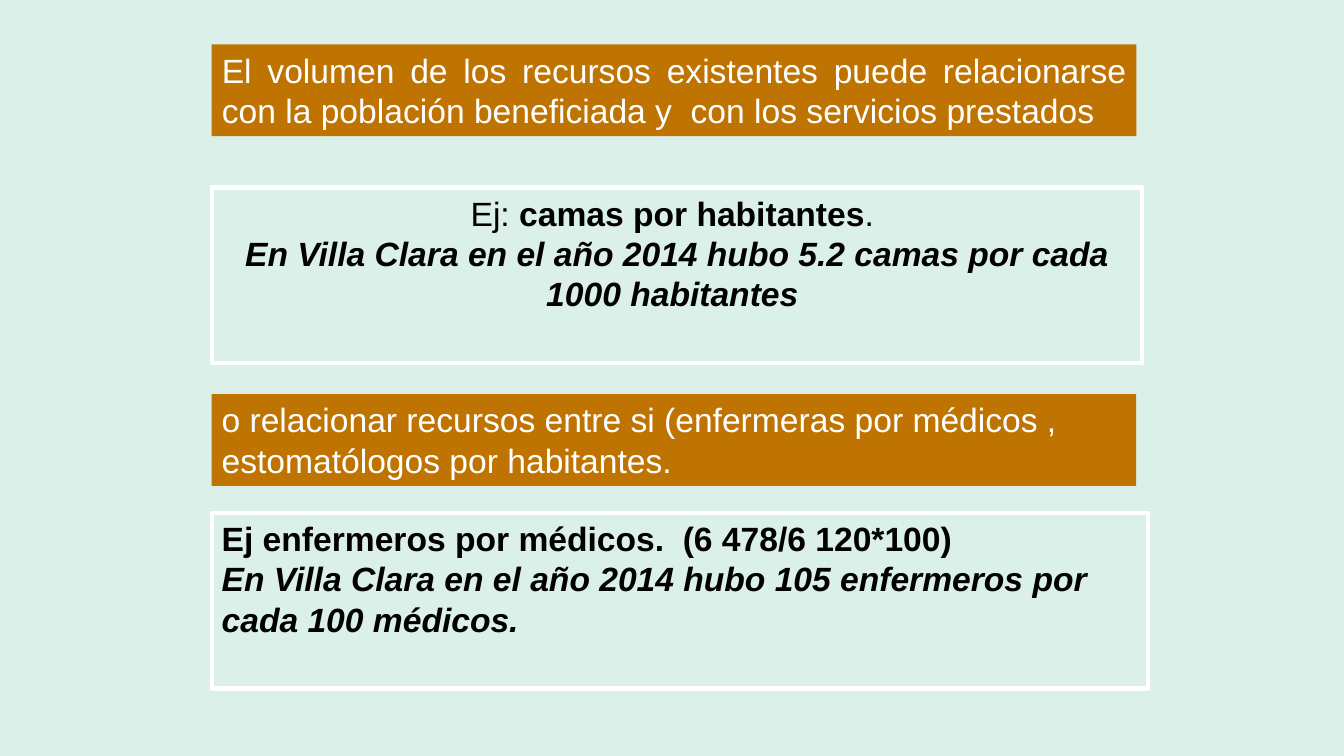
from pptx import Presentation
from pptx.dml.color import RGBColor
from pptx.enum.shapes import MSO_SHAPE as Shape
from pptx.enum.text import MSO_ANCHOR as Anchor, MSO_AUTO_SIZE as AutoSize, PP_ALIGN as Align
from pptx.util import Inches, Pt

MINT = RGBColor(0xDC, 0xF0, 0xEA)
OCHRE = RGBColor(0xBF, 0x73, 0x00)
WHITE = RGBColor(0xFF, 0xFF, 0xFF)
BLACK = RGBColor(0x00, 0x00, 0x00)

PLAIN, BOLD, BOLD_ITALIC = (False, False), (True, False), (True, True)
LEFT = 2.1
STATEMENT_SIZE = (9.17, 0.91)
EXAMPLE_HEIGHT = 1.74

TITLE = [[("El volumen de los recursos existentes puede relacionarse con la "
           "población beneficiada y  con los servicios prestados", PLAIN)]]
RELATION = [[("o relacionar recursos entre si (enfermeras por médicos , "
              "estomatólogos por habitantes.", PLAIN)]]
EXAMPLES = [
    (1.86, 9.23, Align.CENTER, [
        [("Ej: ", PLAIN), ("camas por habitantes", BOLD), (". ", PLAIN)],
        [("En Villa Clara en el año 2014 hubo 5.2 camas por cada 1000 habitantes ", BOLD_ITALIC)],
    ]),
    (5.09, 9.29, Align.LEFT, [
        [("Ej enfermeros por médicos.  (6 478/6 120*100)", BOLD)],
        [("En Villa Clara en el año 2014 hubo 105 enfermeros por cada 100 médicos.", BOLD_ITALIC)],
    ]),
]


def write(box, paragraphs, align, color):
    """Fill a box with styled runs, starting at its top."""
    frame = box.text_frame
    frame.word_wrap = True
    frame.auto_size = AutoSize.NONE
    frame.vertical_anchor = Anchor.TOP
    for index, runs in enumerate(paragraphs):
        para = frame.add_paragraph() if index else frame.paragraphs[0]
        para.alignment = align
        for text, (bold, italic) in runs:
            span = para.add_run()
            span.text = text
            font = span.font
            font.name, font.size = "Arial", Pt(24)
            font.bold, font.italic = bold, italic
            font.color.rgb = color


def add_rectangle(page, top, width, height):
    """Add a rectangle without shadow at the common left edge."""
    box = page.shapes.add_shape(
        Shape.RECTANGLE, Inches(LEFT), Inches(top), Inches(width), Inches(height))
    box.shadow.inherit = False
    return box


def style_statement(box, paragraphs, align):
    """Give a statement its ochre fill and white text."""
    box.fill.solid()
    box.fill.fore_color.rgb = OCHRE
    box.line.fill.background()
    write(box, paragraphs, align, WHITE)


def main():
    """Build the slide and save it."""
    deck = Presentation()
    deck.slide_width, deck.slide_height = Inches(13.33), Inches(7.5)
    page = deck.slides.add_slide(deck.slide_layouts[5])
    page.background.fill.solid()
    page.background.fill.fore_color.rgb = MINT

    title = page.shapes.title
    title.left, title.top = Inches(LEFT), Inches(0.44)
    title.width, title.height = (Inches(side) for side in STATEMENT_SIZE)
    style_statement(title, TITLE, Align.JUSTIFY)

    for top, width, align, paragraphs in EXAMPLES:
        box = add_rectangle(page, top, width, EXAMPLE_HEIGHT)
        box.fill.background()
        box.line.color.rgb = WHITE
        box.line.width = Pt(3)
        write(box, paragraphs, align, BLACK)

    relation = add_rectangle(page, 3.91, *STATEMENT_SIZE)
    style_statement(relation, RELATION, Align.LEFT)
    deck.save("out.pptx")


if __name__ == "__main__":
    main()
